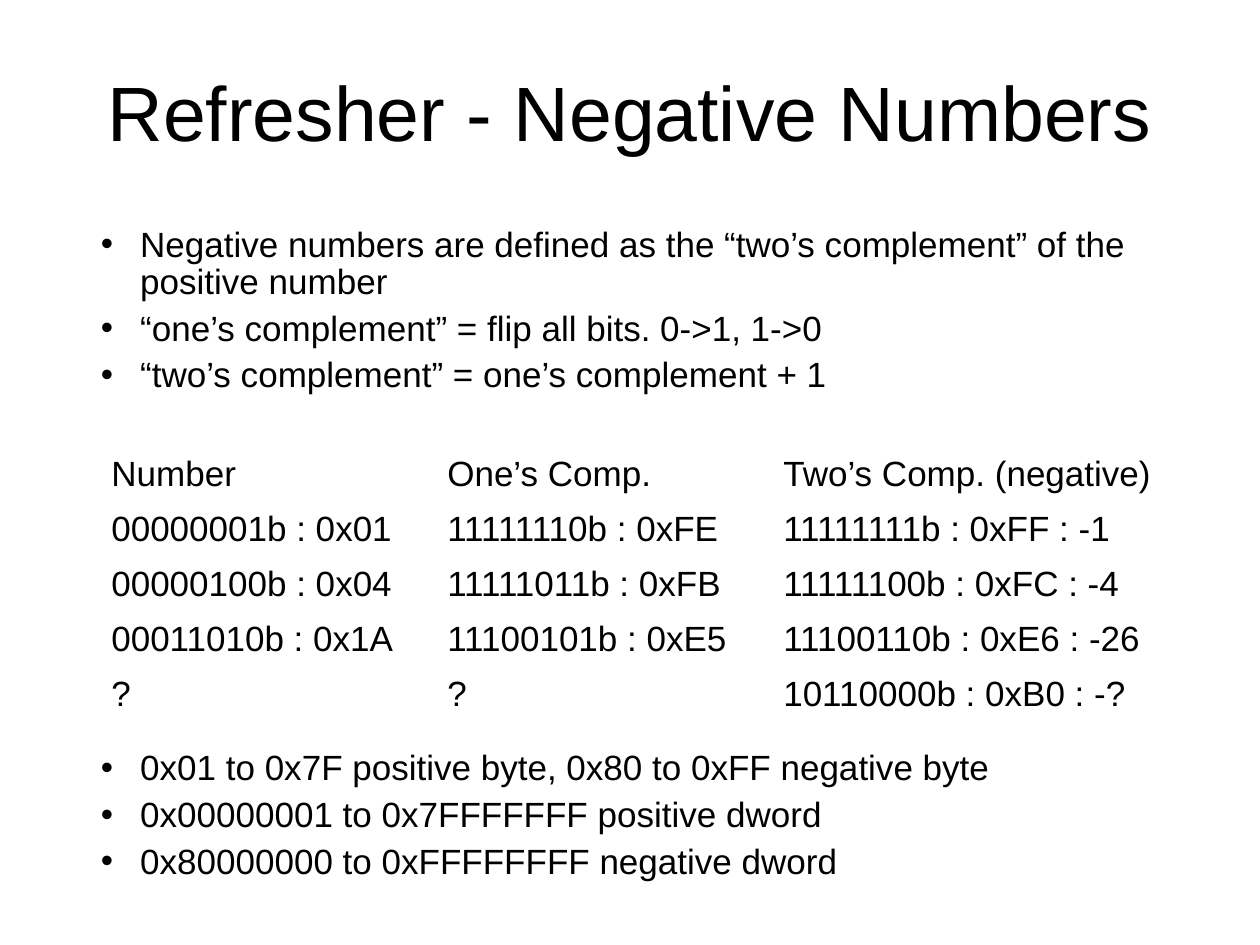
from dataclasses import dataclass

from lxml.etree import SubElement
from pptx import Presentation
from pptx.dml.color import RGBColor
from pptx.enum.text import MSO_ANCHOR, MSO_AUTO_SIZE, PP_ALIGN
from pptx.oxml.ns import qn
from pptx.util import Pt


@dataclass(frozen=True)
class Theme:
    font: str = "Arial"
    ink: RGBColor = RGBColor(0, 0, 0)
    title_size: int = 44
    text_size: int = 20
    inset: float = 3.6
    space_before: int = 5
    bullet_indent: float = 22.5


THEME = Theme()

TITLE = "Refresher - Negative Numbers"
DEFINITIONS = [
    "Negative numbers are defined as the “two’s complement” of the positive number",
    "“one’s complement” = flip all bits. 0->1, 1->0",
    "“two’s complement” = one’s complement + 1",
]
RANGES = [
    "0x01 to 0x7F positive byte, 0x80 to 0xFF negative byte",
    "0x00000001 to 0x7FFFFFFF positive dword",
    "0x80000000 to 0xFFFFFFFF negative dword",
]
COMPLEMENTS = [
    ["Number", "One’s Comp.", "Two’s Comp. (negative)"],
    ["00000001b : 0x01", "11111110b : 0xFE", "11111111b : 0xFF : -1"],
    ["00000100b : 0x04", "11111011b : 0xFB", "11111100b : 0xFC : -4"],
    ["00011010b : 0x1A", "11100101b : 0xE5", "11100110b : 0xE6 : -26"],
    ["?", "?", "10110000b : 0xB0 : -?"],
]
TABLE_GAP = 203
COLUMN_WIDTHS = [192, 192, 234]
ROW_HEIGHT = 31.4


def place(shape, left, top, width, height):
    shape.left, shape.top = Pt(left), Pt(top)
    shape.width, shape.height = Pt(width), Pt(height)


def set_insets(holder, inset):
    """Give a text frame or table cell the same margin on all sides."""
    holder.margin_left = holder.margin_right = Pt(inset)
    holder.margin_top = holder.margin_bottom = Pt(inset)


def style_paragraph(paragraph, size, align=PP_ALIGN.LEFT, spacing=1.0, before=0):
    paragraph.alignment = align
    paragraph.line_spacing = spacing
    paragraph.space_before = Pt(before)
    paragraph.font.name = THEME.font
    paragraph.font.size = Pt(size)
    paragraph.font.color.rgb = THEME.ink


def add_bullet(paragraph):
    properties = paragraph._p.get_or_add_pPr()
    properties.set("marL", str(Pt(THEME.bullet_indent)))
    properties.set("indent", str(-Pt(THEME.bullet_indent)))
    SubElement(properties, qn("a:buFont"), typeface=THEME.font)
    SubElement(properties, qn("a:buChar"), char="•")


def fill_title(title):
    place(title, 54, 35.3, 612, 55.4)
    frame = title.text_frame
    frame.text = TITLE
    frame.auto_size = MSO_AUTO_SIZE.NONE
    frame.vertical_anchor = MSO_ANCHOR.MIDDLE
    set_insets(frame, 0)
    style_paragraph(frame.paragraphs[0], THEME.title_size, PP_ALIGN.CENTER)


def fill_bullets(body):
    """Write both lists, leaving room for the table between them."""
    place(body, 54, 126, 612, 373)
    frame = body.text_frame
    frame.text = "\n".join(DEFINITIONS + RANGES)
    frame.auto_size = MSO_AUTO_SIZE.NONE
    set_insets(frame, THEME.inset)
    for index, paragraph in enumerate(frame.paragraphs):
        before = TABLE_GAP if index == len(DEFINITIONS) else THEME.space_before
        style_paragraph(paragraph, THEME.text_size, spacing=0.9, before=before)
        add_bullet(paragraph)


def add_complement_table(slide):
    table = slide.shapes.add_table(
        len(COMPLEMENTS), len(COLUMN_WIDTHS), Pt(60), Pt(257.8),
        Pt(sum(COLUMN_WIDTHS)), Pt(ROW_HEIGHT * len(COMPLEMENTS))).table
    table.first_row = table.horz_banding = False
    for column, width in zip(table.columns, COLUMN_WIDTHS):
        column.width = Pt(width)
    for row, texts in zip(table.rows, COMPLEMENTS):
        row.height = Pt(ROW_HEIGHT)
        for cell, text in zip(row.cells, texts):
            cell.text = text
            cell.fill.background()
            set_insets(cell, THEME.inset)
            style_paragraph(cell.text_frame.paragraphs[0], THEME.text_size,
                            spacing=0.93, before=THEME.space_before)


def main():
    presentation = Presentation()
    presentation.slide_width, presentation.slide_height = Pt(720), Pt(540)
    slide = presentation.slides.add_slide(presentation.slide_layouts[1])
    fill_title(slide.shapes.title)
    fill_bullets(slide.placeholders[1])
    add_complement_table(slide)
    presentation.save("out.pptx")


if __name__ == "__main__":
    main()
